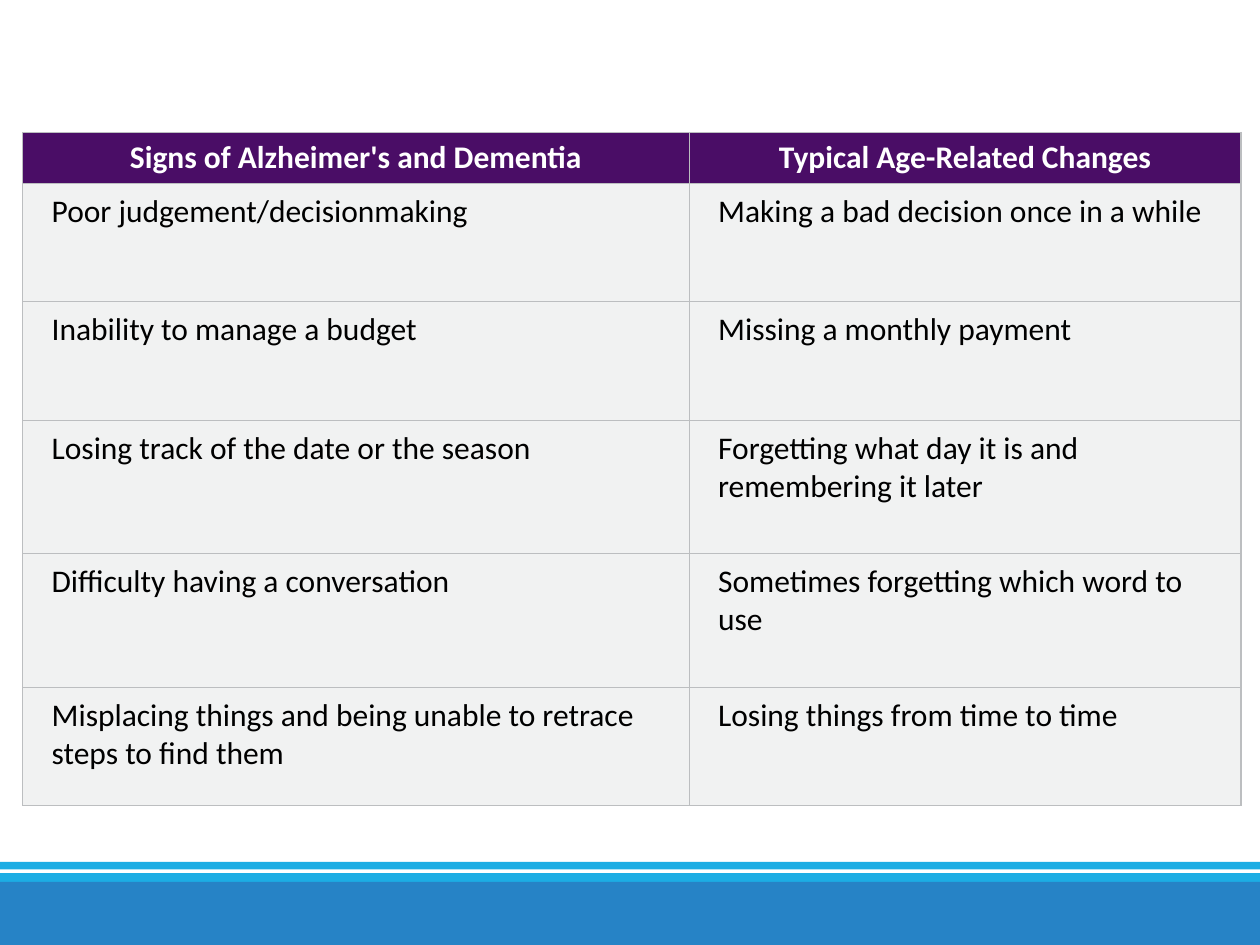
from lxml import etree
from pptx import Presentation
from pptx.dml.color import RGBColor
from pptx.enum.shapes import MSO_SHAPE
from pptx.enum.text import MSO_ANCHOR, PP_ALIGN
from pptx.oxml.ns import qn
from pptx.util import Inches, Pt

RECT = MSO_SHAPE.RECTANGLE
TOP, MIDDLE = MSO_ANCHOR.TOP, MSO_ANCHOR.MIDDLE
LEFT, CENTER = PP_ALIGN.LEFT, PP_ALIGN.CENTER

BANDS = [(6.84, 0.06, "1CADE4"), (6.93, 0.07, "1CADE4"), (7, 0.5, "2683C6")]
WIDTHS = [5.29, 4.38]
HEIGHTS = [0.39, 0.94, 0.94, 1.06, 1.06, 0.94]
ROWS = [
    ("Signs of Alzheimer's and Dementia", "Typical Age-Related Changes"),
    ("Poor judgement/decisionmaking", "Making a bad decision once in a while"),
    ("Inability to manage a budget", "Missing a monthly payment"),
    ("Losing track of the date or the season",
     "Forgetting what day it is and remembering it later"),
    ("Difficulty having a conversation", "Sometimes forgetting which word to use"),
    ("Misplacing things and being unable to retrace steps to find them",
     "Losing things from time to time"),
]
HEAD = {"fill": "4A0D66", "color": "FFFFFF", "bold": True, "align": CENTER,
        "anchor": MIDDLE, "side": 0.07, "edge": 0.05}
BODY = {"fill": "F1F2F2", "color": "000000", "bold": False, "align": LEFT,
        "anchor": TOP, "side": 0.23, "edge": 0.07}


def color(value):
    return RGBColor.from_string(value)


class Deck:
    font = "Calibri"
    size = 18
    rule = "BCBEC0"
    weight = 0.75

    def __init__(self, slide):
        self.slide = slide

    def band(self, top, height, fill):
        shape = self.slide.shapes.add_shape(
            RECT, 0, Inches(top), Inches(10), Inches(height))
        shape.shadow.inherit = False
        shape.fill.solid()
        shape.fill.fore_color.rgb = color(fill)
        shape.line.fill.background()

    def border(self, cell):
        props = cell._tc.get_or_add_tcPr()
        for side in ("lnL", "lnR", "lnT", "lnB"):
            line = etree.SubElement(props, qn("a:" + side), w=str(Pt(self.weight)))
            fill = etree.SubElement(line, qn("a:solidFill"))
            etree.SubElement(fill, qn("a:srgbClr"), val=self.rule)

    def cell(self, cell, text, style):
        self.border(cell)
        cell.fill.solid()
        cell.fill.fore_color.rgb = color(style["fill"])
        side, edge = Inches(style["side"]), Inches(style["edge"])
        layout = {"margin_left": side, "margin_right": side, "margin_top": edge,
                  "margin_bottom": edge, "vertical_anchor": style["anchor"]}
        for name, value in layout.items():
            setattr(cell, name, value)
        para = cell.text_frame.paragraphs[0]
        para.alignment = style["align"]
        run = para.add_run()
        run.text = text
        format = {"name": self.font, "size": Pt(self.size), "bold": style["bold"]}
        for name, value in format.items():
            setattr(run.font, name, value)
        run.font.color.rgb = color(style["color"])

    def table(self, left, top, widths, heights, rows):
        table = self.slide.shapes.add_table(
            len(rows), len(widths), Inches(left), Inches(top),
            Inches(sum(widths)), Inches(sum(heights))).table
        for column, width in zip(table.columns, widths):
            column.width = Inches(width)
        for index, (row, height) in enumerate(zip(table.rows, heights)):
            row.height = Inches(height)
            for cell, text in zip(row.cells, rows[index]):
                self.cell(cell, text, BODY if index else HEAD)


def main():
    show = Presentation()
    show.slide_width, show.slide_height = Inches(10), Inches(7.5)
    deck = Deck(show.slides.add_slide(show.slide_layouts[6]))
    for band in BANDS:
        deck.band(*band)
    deck.table(0.18, 1.05, WIDTHS, HEIGHTS, ROWS)
    show.save("out.pptx")


if __name__ == "__main__":
    main()
